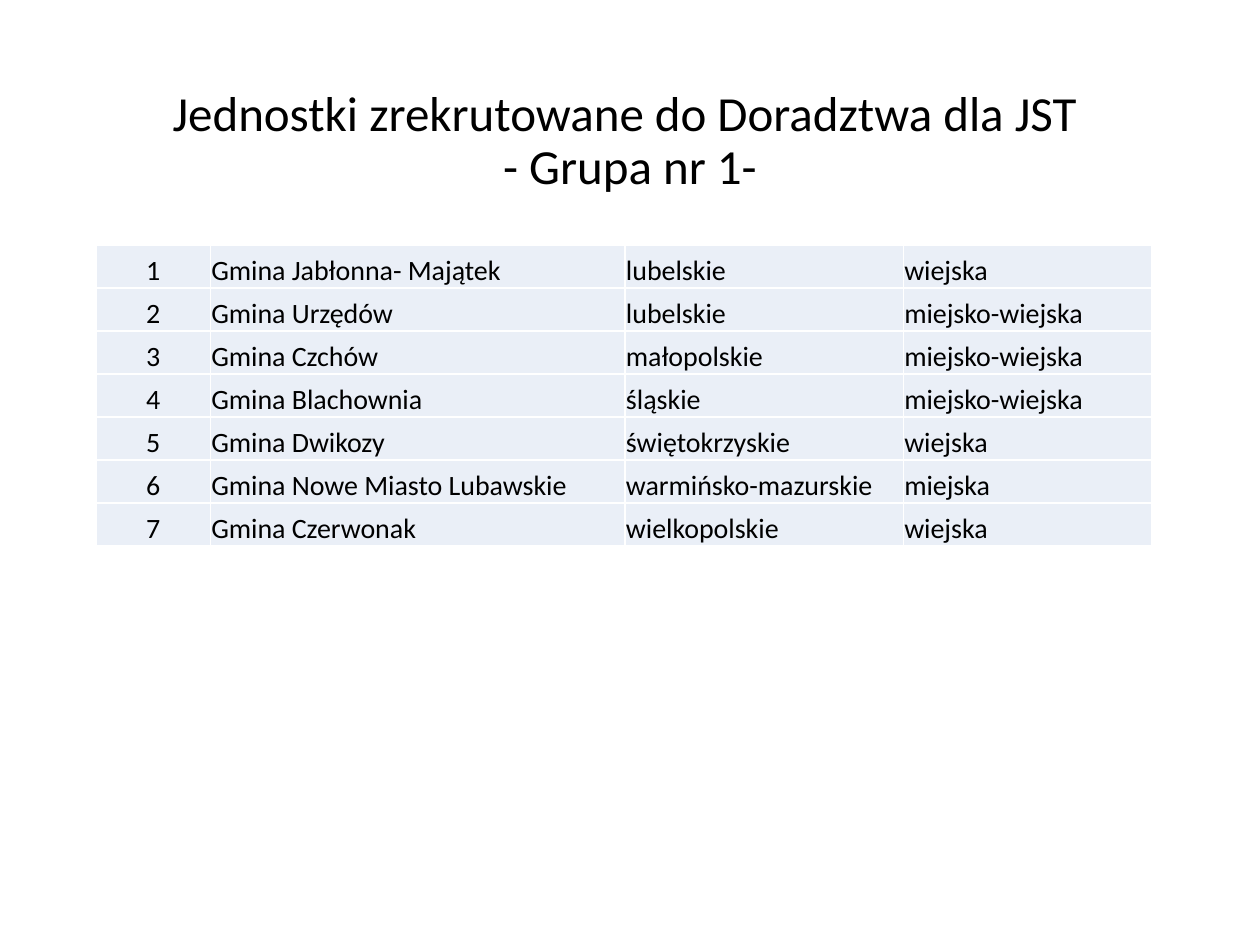
"""Build the slide listing the municipalities recruited to group 1."""
from dataclasses import dataclass

from lxml import etree
from pptx import Presentation
from pptx.dml.color import RGBColor
from pptx.enum.text import MSO_ANCHOR, PP_ALIGN
from pptx.oxml.ns import qn
from pptx.util import Cm, Pt

CENTER, LEFT = PP_ALIGN.CENTER, PP_ALIGN.LEFT
MIDDLE, BOTTOM = MSO_ANCHOR.MIDDLE, MSO_ANCHOR.BOTTOM


@dataclass(frozen=True)
class Theme:
    font: str = "Calibri"
    text: str = "000000"
    cell: str = "EAEFF7"
    border: str = "FFFFFF"
    title_size: int = 28
    cell_size: int = 16


THEME = Theme()

TITLE = "Jednostki zrekrutowane do Doradztwa dla JST \v- Grupa nr 1-"
UNITS = [
    ("Gmina Jabłonna- Majątek", "lubelskie", "wiejska"),
    ("Gmina Urzędów", "lubelskie", "miejsko-wiejska"),
    ("Gmina Czchów", "małopolskie", "miejsko-wiejska"),
    ("Gmina Blachownia", "śląskie", "miejsko-wiejska"),
    ("Gmina Dwikozy", "świętokrzyskie", "wiejska"),
    ("Gmina Nowe Miasto Lubawskie", "warmińsko-mazurskie", "miejska"),
    ("Gmina Czerwonak", "wielkopolskie", "wiejska"),
]
COL_WIDTHS = [2.3, 8.36, 5.61, 5.01]
TABLE_HEIGHT = 6.07


def format_runs(p, size, align):
    p.alignment = align
    for r in p.runs:
        r.font.name = THEME.font
        r.font.size = Pt(size)
        r.font.color.rgb = RGBColor.from_string(THEME.text)


def add_borders(cell):
    tc_pr = cell._tc.get_or_add_tcPr()
    for side in ("lnL", "lnR", "lnT", "lnB"):
        ln = etree.SubElement(tc_pr, qn(f"a:{side}"), w=str(Pt(1)))
        fill = etree.SubElement(ln, qn("a:solidFill"))
        etree.SubElement(fill, qn("a:srgbClr"), val=THEME.border)


prs = Presentation()
prs.slide_width, prs.slide_height = Cm(25.4), Cm(19.05)
s = prs.slides.add_slide(prs.slide_layouts[6])

title = s.shapes.add_textbox(Cm(1.75), Cm(1.02), Cm(21.9), Cm(3.68))
tf = title.text_frame
tf.word_wrap = True
tf.vertical_anchor = MIDDLE
p = tf.paragraphs[0]
p.text = TITLE
p.line_spacing = 0.9
format_runs(p, THEME.title_size, CENTER)

table = s.shapes.add_table(
    len(UNITS), len(COL_WIDTHS), Cm(1.94), Cm(4.94), Cm(sum(COL_WIDTHS)), Cm(TABLE_HEIGHT)
).table
table.first_row = False
table.horz_banding = False
for column, width in zip(table.columns, COL_WIDTHS):
    column.width = Cm(width)

for i, unit in enumerate(UNITS):
    table.rows[i].height = Cm(TABLE_HEIGHT / len(UNITS))
    for j, value in enumerate((str(i + 1), *unit)):
        cell = table.cell(i, j)
        cell.margin_left = cell.margin_right = cell.margin_top = Cm(0.02)
        cell.margin_bottom = 0
        cell.vertical_anchor = BOTTOM
        add_borders(cell)
        cell.fill.solid()
        cell.fill.fore_color.rgb = RGBColor.from_string(THEME.cell)
        p = cell.text_frame.paragraphs[0]
        p.text = value
        format_runs(p, THEME.cell_size, CENTER if j == 0 else LEFT)

prs.save("out.pptx")
